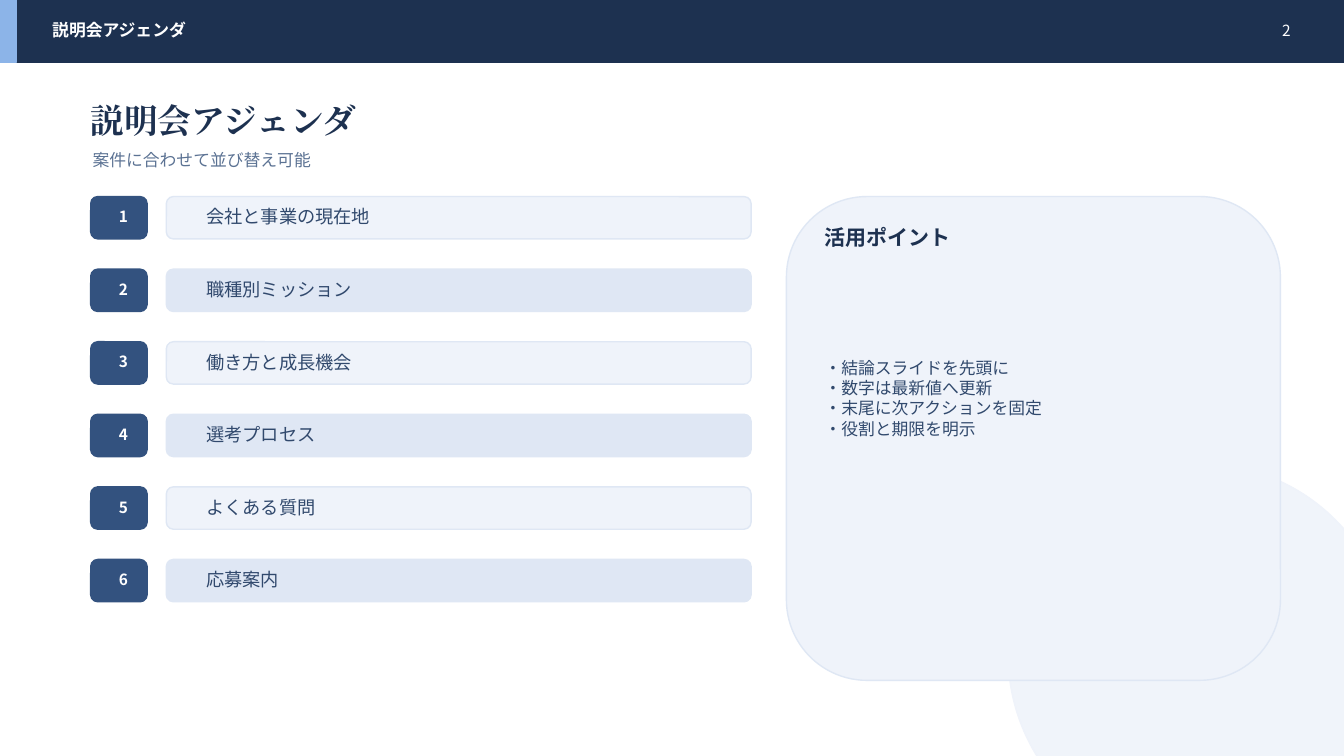
import lxml.etree
import pptx
import pptx.dml.color
import pptx.enum.lang
import pptx.enum.shapes
import pptx.enum.text
import pptx.oxml.ns
import pptx.util

Inches = pptx.util.Inches
RGBColor = pptx.dml.color.RGBColor
Shape = pptx.enum.shapes.MSO_SHAPE
Align = pptx.enum.text.PP_ALIGN

WHITE = RGBColor(0xFF, 0xFF, 0xFF)
NAVY = RGBColor(0x1D, 0x31, 0x50)
BLUE = RGBColor(0x33, 0x52, 0x7F)
SKY = RGBColor(0x8C, 0xB4, 0xE8)
PALE = RGBColor(0xEF, 0xF3, 0xFA)
MIST = RGBColor(0xDF, 0xE7, 0xF4)
BODY = RGBColor(0x31, 0x49, 0x6D)
MUTED = RGBColor(0x5B, 0x72, 0x93)

SANS = "Noto Sans CJK JP"
SERIF = "Times New Roman"

TITLE = "説明会アジェンダ"
SUBTITLE = "案件に合わせて並び替え可能"
AGENDA = [
    "会社と事業の現在地",
    "職種別ミッション",
    "働き方と成長機会",
    "選考プロセス",
    "よくある質問",
    "応募案内",
]
POINTS = [
    "・結論スライドを先頭に",
    "・数字は最新値へ更新",
    "・末尾に次アクションを固定",
    "・役割と期限を明示",
]


def add_panel(slide, kind, left, top, width, height, fill, line=None):
    shape = slide.shapes.add_shape(
        kind, Inches(left), Inches(top), Inches(width), Inches(height))
    shape.shadow.inherit = False
    shape.fill.solid()
    shape.fill.fore_color.rgb = fill
    shape.line.color.rgb = line or fill
    shape.line.width = pptx.util.Pt(1)
    return shape


def add_text(slide, left, top, width, height, lines, size, color,
             bold=False, align=Align.LEFT, font_name=SANS):
    box = slide.shapes.add_textbox(
        Inches(left), Inches(top), Inches(width), Inches(height))
    frame = box.text_frame
    frame.word_wrap = True
    frame.vertical_anchor = pptx.enum.text.MSO_ANCHOR.MIDDLE
    for index, line in enumerate(lines):
        paragraph = frame.add_paragraph() if index else frame.paragraphs[0]
        paragraph.alignment = align
        run = paragraph.add_run()
        run.text = line
        run.font.name = font_name
        run.font.size = pptx.util.Pt(size)
        run.font.bold = bold
        run.font.color.rgb = color
        run.font.language_id = pptx.enum.lang.MSO_LANGUAGE_ID.JAPANESE
        east_asian = lxml.etree.SubElement(
            run.font._element, pptx.oxml.ns.qn("a:ea"))
        east_asian.set("typeface", font_name)


def add_backdrop(slide, left, top, size):
    circle = add_panel(slide, Shape.OVAL, left, top, size, size, PALE)
    color = circle.fill._xPr.find(".//" + pptx.oxml.ns.qn("a:srgbClr"))
    alpha = lxml.etree.SubElement(color, pptx.oxml.ns.qn("a:alpha"))
    alpha.set("val", "88000")


def add_header(slide, left, top, width, height):
    add_panel(slide, Shape.RECTANGLE, left, top, width, height, NAVY)
    add_panel(slide, Shape.RECTANGLE, left, top, 0.16, height, SKY)
    add_text(slide, left + 0.42, top + 0.17, 8.8, 0.26, [TITLE], 12, WHITE,
             bold=True)
    add_text(slide, left + width - 1.18, top + 0.17, 0.75, 0.26, ["2"], 11,
             WHITE, align=Align.RIGHT)


def add_heading(slide, left, top, width):
    add_text(slide, left, top, width, 0.48, [TITLE], 24, NAVY, bold=True,
             font_name=SERIF)
    add_text(slide, left + 0.02, top + 0.49, width - 0.2, 0.3, [SUBTITLE],
             12, MUTED)


def add_agenda(slide, left, top, width, pitch):
    row_height = 0.42
    bar_offset = 0.75
    bar_width = width - bar_offset
    for index, item in enumerate(AGENDA):
        row_top = top + index * pitch
        add_panel(slide, Shape.ROUNDED_RECTANGLE, left, row_top, 0.56,
                  row_height, BLUE)
        add_text(slide, left + 0.18, row_top + 0.1, 0.2, 0.2,
                 [str(index + 1)], 11, WHITE, bold=True, align=Align.CENTER)
        add_panel(slide, Shape.ROUNDED_RECTANGLE, left + bar_offset, row_top,
                  bar_width, row_height, MIST if index % 2 else PALE, MIST)
        add_text(slide, left + bar_offset + 0.3, row_top + 0.1,
                 bar_width - 0.6, 0.2, [item], 13, BODY)


def add_points(slide, left, top, width, height):
    add_panel(slide, Shape.ROUNDED_RECTANGLE, left, top, width, height, PALE,
              MIST)
    add_text(slide, left + 0.28, top + 0.25, width - 0.8, 0.3,
             ["活用ポイント"], 15, NAVY, bold=True)
    add_text(slide, left + 0.28, top + 0.75, width - 0.7, 2.5, POINTS, 12,
             BODY)


def main():
    presentation = pptx.Presentation()
    presentation.slide_width = Inches(13.33)
    presentation.slide_height = Inches(7.5)
    slide = presentation.slides.add_slide(presentation.slide_layouts[6])
    slide.background.fill.solid()
    slide.background.fill.fore_color.rgb = WHITE
    add_backdrop(slide, 10, 4.6, 3.8)
    add_header(slide, 0, 0, 13.33, 0.62)
    add_heading(slide, 0.8, 0.95, 11.4)
    add_agenda(slide, 0.9, 1.95, 6.55, 0.72)
    add_points(slide, 7.8, 1.95, 4.9, 4.8)
    presentation.save("out.pptx")


if __name__ == "__main__":
    main()
